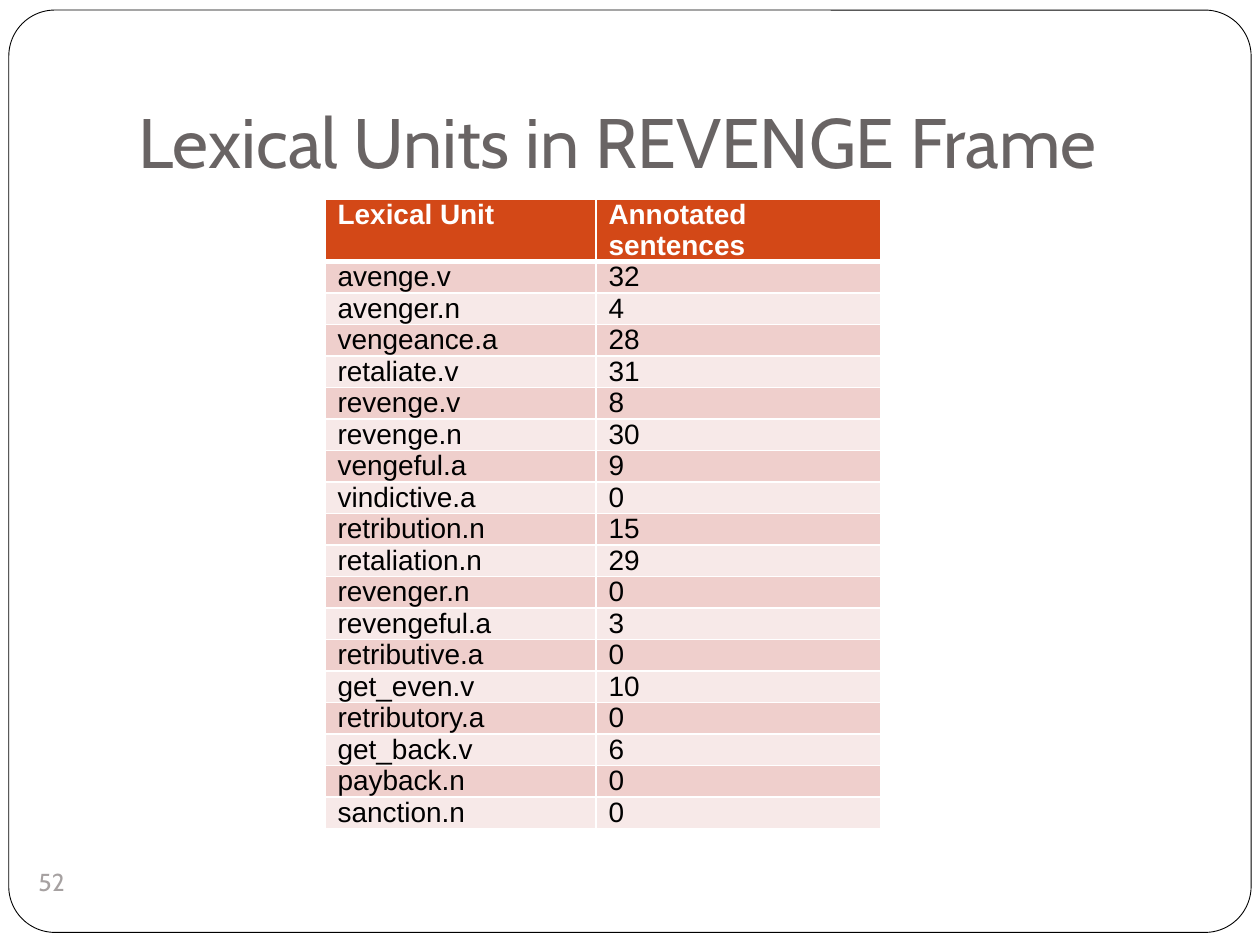
from pptx import Presentation
from pptx.dml.color import RGBColor
from pptx.enum.shapes import MSO_SHAPE
from pptx.enum.text import MSO_ANCHOR, MSO_AUTO_SIZE, PP_ALIGN
from pptx.oxml import parse_xml
from pptx.oxml.ns import nsdecls
from pptx.util import Inches, Pt

WHITE = RGBColor(0xFF, 0xFF, 0xFF)
BLACK = RGBColor(0x00, 0x00, 0x00)
TITLE_GRAY = RGBColor(0x69, 0x64, 0x64)
NUMBER_GRAY = RGBColor(0xA6, 0xA1, 0xA1)
ORANGE = RGBColor(0xD3, 0x48, 0x17)
DARK_BAND = RGBColor(0xEF, 0xCF, 0xCC)
LIGHT_BAND = RGBColor(0xF7, 0xE9, 0xE8)

HEADINGS = ("Lexical Unit", "Annotated sentences")
LEXICAL_UNITS = [
    ("avenge.v", 32), ("avenger.n", 4), ("vengeance.a", 28),
    ("retaliate.v", 31), ("revenge.v", 8), ("revenge.n", 30),
    ("vengeful.a", 9), ("vindictive.a", 0), ("retribution.n", 15),
    ("retaliation.n", 29), ("revenger.n", 0), ("revengeful.a", 3),
    ("retributive.a", 0), ("get_even.v", 10), ("retributory.a", 0),
    ("get_back.v", 6), ("payback.n", 0), ("sanction.n", 0),
]


def style_text(paragraph, font_name, size, color, bold=False):
    for run in paragraph.runs:
        run.font.name = font_name
        run.font.size = Pt(size)
        run.font.bold = bold
        run.font.color.rgb = color


def add_borders(cell, bottom_width):
    """Put white lines around a cell, 1 pt except at the bottom."""
    properties = cell._tc.get_or_add_tcPr()
    widths = {"lnL": 1, "lnR": 1, "lnT": 1, "lnB": bottom_width}
    for position, (side, width) in enumerate(widths.items()):
        properties.insert(position, parse_xml(
            f'<a:{side} {nsdecls("a")} w="{Pt(width)}"><a:solidFill>'
            f'<a:srgbClr val="{WHITE}"/></a:solidFill></a:{side}>'))


prs = Presentation()
prs.slide_width = Inches(10)
prs.slide_height = Inches(7.5)
slide = prs.slides.add_slide(prs.slide_layouts[5])

# Title
title = slide.shapes.title
title.left, title.top = Inches(1), Inches(0.3)
title.width, title.height = Inches(8.5), Inches(1.25)
title.text_frame.text = "Lexical Units in REVENGE Frame"
title.text_frame.auto_size = MSO_AUTO_SIZE.NONE
title.text_frame.vertical_anchor = MSO_ANCHOR.BOTTOM
title.text_frame.margin_bottom = Inches(0.1)
title.text_frame.paragraphs[0].alignment = PP_ALIGN.LEFT
style_text(title.text_frame.paragraphs[0], "Cabin", 40, TITLE_GRAY)

# Rounded frame behind everything
frame = slide.shapes.add_shape(MSO_SHAPE.ROUNDED_RECTANGLE, Inches(0.07),
                               Inches(0.08), Inches(9.86), Inches(7.32))
frame.adjustments[0] = 0.05
frame.shadow.inherit = False
frame.fill.solid()
frame.fill.fore_color.rgb = WHITE
frame.line.color.rgb = BLACK
frame.line.width = Pt(0.5)
title.element.addprevious(frame.element)

# Slide number
number = slide.shapes.add_shape(MSO_SHAPE.OVAL, Inches(0.16), Inches(6.75),
                                Inches(0.5), Inches(0.5))
number.shadow.inherit = False
number.fill.background()
number.line.fill.background()
number_text = number.text_frame
number_text.text = "52"
number_text.word_wrap = False
number_text.vertical_anchor = MSO_ANCHOR.MIDDLE
number_text.margin_left = number_text.margin_right = 0
number_text.margin_top = number_text.margin_bottom = 0
number_text.paragraphs[0].alignment = PP_ALIGN.CENTER
style_text(number_text.paragraphs[0], "Cabin", 14, NUMBER_GRAY)

# Lexical units with their sentence counts
rows = [HEADINGS, *LEXICAL_UNITS]
row_height = Inches(0.25)
units = slide.shapes.add_table(len(rows), 2, Inches(2.58), Inches(1.58),
                               Inches(4.41), row_height * len(rows)).table
units.columns[0].width = Inches(2.15)
units.columns[1].width = Inches(2.26)
for row_index, values in enumerate(rows):
    units.rows[row_index].height = row_height
    is_header = row_index == 0
    if is_header:
        fill_color = ORANGE
    else:
        fill_color = DARK_BAND if row_index % 2 else LIGHT_BAND
    for column_index, value in enumerate(values):
        cell = units.cell(row_index, column_index)
        cell.text_frame.text = str(value)
        cell.margin_left = cell.margin_right = Inches(0.1)
        cell.margin_top = cell.margin_bottom = 0
        cell.fill.solid()
        cell.fill.fore_color.rgb = fill_color
        add_borders(cell, 3 if is_header else 1)
        style_text(cell.text_frame.paragraphs[0], "Arial", 16,
                   WHITE if is_header else BLACK, bold=is_header)

prs.save("out.pptx")
